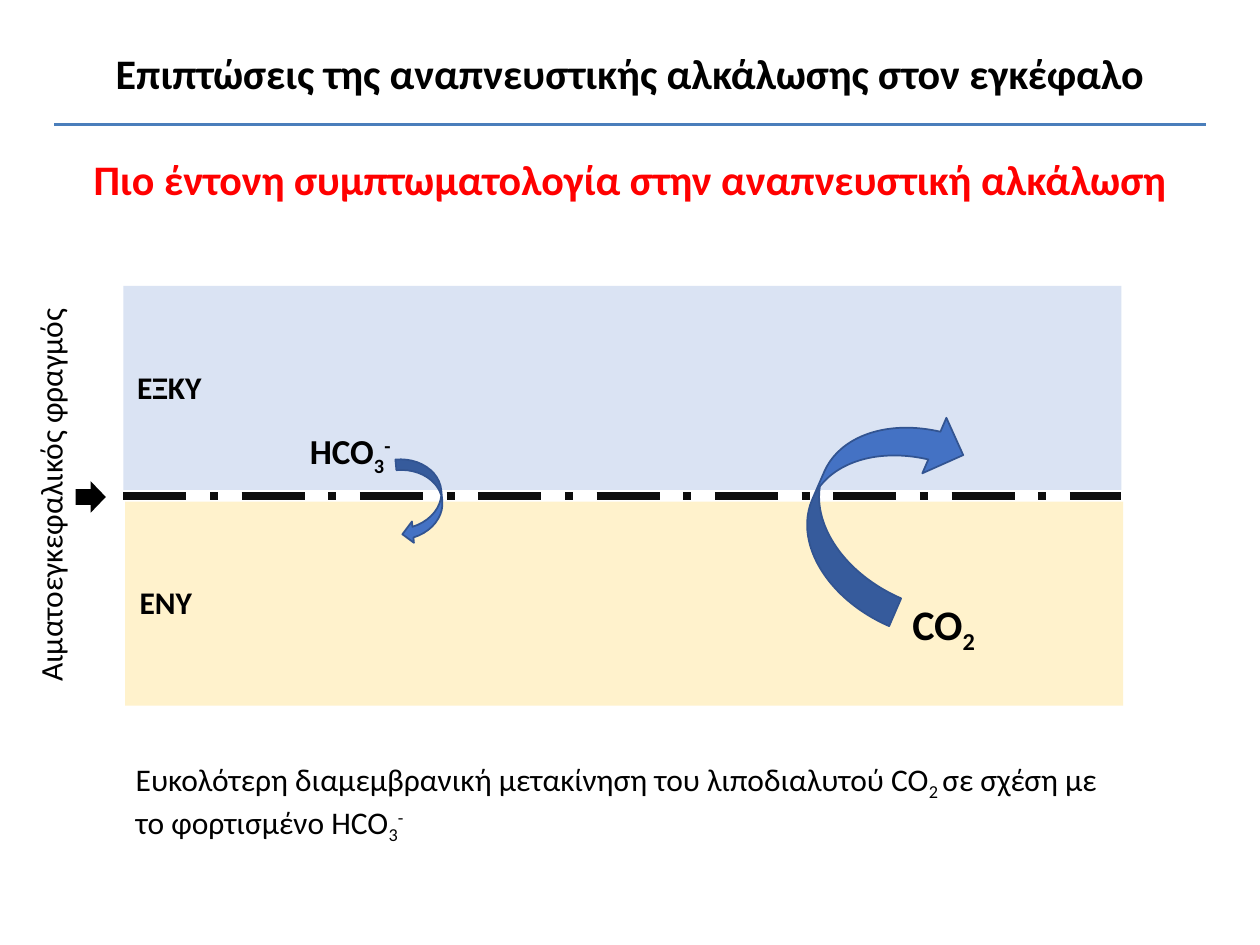
from pptx import Presentation
from pptx.dml.color import RGBColor
from pptx.enum.dml import MSO_LINE
from pptx.enum.shapes import MSO_CONNECTOR, MSO_SHAPE
from pptx.enum.text import MSO_ANCHOR, MSO_AUTO_SIZE, PP_ALIGN
from pptx.oxml.ns import qn
from pptx.util import Pt
from lxml import etree

RECT, CURVED, RIGHT = MSO_SHAPE.RECTANGLE, MSO_SHAPE.CURVED_DOWN_ARROW, MSO_SHAPE.RIGHT_ARROW
STRAIGHT, DASH = MSO_CONNECTOR.STRAIGHT, MSO_LINE.LONG_DASH_DOT
LEFT, CENTER = PP_ALIGN.LEFT, PP_ALIGN.CENTER
TOP, NO_FIT = MSO_ANCHOR.TOP, MSO_AUTO_SIZE.NONE
SUB, SUP = -25000, 30000
FONT = "Calibri"
COLORS = {
    "text": "000000", "accent": "FF0000", "rule": "4A7EBB",
    "blood": "DAE3F3", "csf": "FFF2CC", "barrier": "0D0D0D",
    "arrow": "4472C4", "arrow_line": "325491",
}


def rgb(name):
    return RGBColor.from_string(COLORS[name])


def fill_text(sp, runs, size, bold=True, color="text", align=CENTER):
    tf = sp.text_frame
    tf.word_wrap = True
    tf.auto_size = NO_FIT
    tf.vertical_anchor = TOP
    p = tf.paragraphs[0]
    p.alignment = align
    for text, baseline in runs:
        r = p.add_run()
        r.text = text
        r.font.name, r.font.size, r.font.bold = FONT, Pt(size), bold
        r.font.color.rgb = rgb(color)
        if baseline:
            r.font._element.set("baseline", str(baseline))


def add_text(s, x, y, w, h, runs, size, **style):
    sp = s.shapes.add_textbox(Pt(x), Pt(y), Pt(w), Pt(h))
    fill_text(sp, runs, size, **style)
    return sp


def add_shape(s, kind, x, y, w, h, fill, line=None, rotation=0):
    sp = s.shapes.add_shape(kind, Pt(x), Pt(y), Pt(w), Pt(h))
    sp.shadow.inherit = False
    sp.rotation = rotation
    sp.fill.solid()
    sp.fill.fore_color.rgb = rgb(fill)
    if line:
        sp.line.color.rgb = rgb(line)
        sp.line.width = Pt(1)
    else:
        sp.line.fill.background()


def add_line(s, x, y, w, color, width, dash=None):
    cx = s.shapes.add_connector(STRAIGHT, Pt(x), Pt(y), Pt(x + w), Pt(y))
    cx.line.color.rgb = rgb(color)
    cx.line.width = Pt(width)
    if dash:
        cx.line.dash_style = dash
    etree.SubElement(cx._element.spPr, qn("a:effectLst"))


def header(s, x, y, w):
    sp = s.shapes.title
    sp.left, sp.top, sp.width, sp.height = Pt(x), Pt(y), Pt(w), Pt(36)
    fill_text(sp, [("Επιπτώσεις της αναπνευστικής αλκάλωσης στον εγκέφαλο", 0)], 24)
    add_line(s, x + 31, y + 47.5, w - 62, "rule", 1.5)
    add_text(s, x + 31, y + 60.5, w - 62, 36,
             [("Πιο έντονη συμπτωματολογία στην αναπνευστική αλκάλωση", 0)], 24,
             color="accent")


def compartments(s, x, y, w, h):
    band = 116.6
    middle = y + h / 2
    add_shape(s, RECT, x + 1, y + h - band, w, band, "csf")
    add_shape(s, RECT, x, y, w, band, "blood")
    add_shape(s, CURVED, x + 368.6, y + 89.3, 123.8, 69.1, "arrow", "arrow_line", 293.4)
    add_text(s, x + 438.5, y + 175, 60.5, 36, [("CO", 0), ("2", SUB)], 24)
    add_shape(s, CURVED, x + 145.4, y + 110.2, 49, 24.5, "arrow", "arrow_line", 84.7)
    add_text(s, x + 96.5, y + 78.5, 66.2, 31.7,
             [("HCO", 0), ("3", SUB), ("-", SUP)], 20)
    add_line(s, x, middle, w, "barrier", 4.5, DASH)
    add_text(s, x + 2.2, y + 166.4, 66, 29, [("ΕΝΥ", 0)], 18, align=LEFT)
    add_text(s, x + 0.7, y + 43.2, 76, 29, [("ΕΞΚΥ", 0)], 18, align=LEFT)


def barrier_label(s, x, y, w, h):
    middle = y + h / 2
    sp = add_text(s, x + (w - h) / 2, middle - w / 2, h, w,
                  [("Αιματοεγκεφαλικός φραγμός", 0)], 18, bold=False)
    sp.rotation = 270
    add_shape(s, RIGHT, x + 28.9, middle - 8, 17.3, 18, "text")


def conclusion(s, x, y, w, h):
    add_text(s, x, y, w, h,
             [("Ευκολότερη διαμεμβρανική μετακίνηση του λιποδιαλυτού CO", 0),
              ("2 ", SUB), ("σε σχέση με το φορτισμένο HCO", 0),
              ("3", SUB), ("-", SUP)], 18, bold=False, align=LEFT)


def main():
    prs = Presentation()
    prs.slide_width, prs.slide_height = Pt(720), Pt(540)
    s = prs.slides.add_slide(prs.slide_layouts[5])
    header(s, 0, 23.8, 720)
    compartments(s, 70.5, 163.4, 570.3, 239.8)
    barrier_label(s, 14.3, 154, 29, 258)
    conclusion(s, 70.5, 430.5, 571.7, 51)
    prs.save("out.pptx")


if __name__ == "__main__":
    main()
